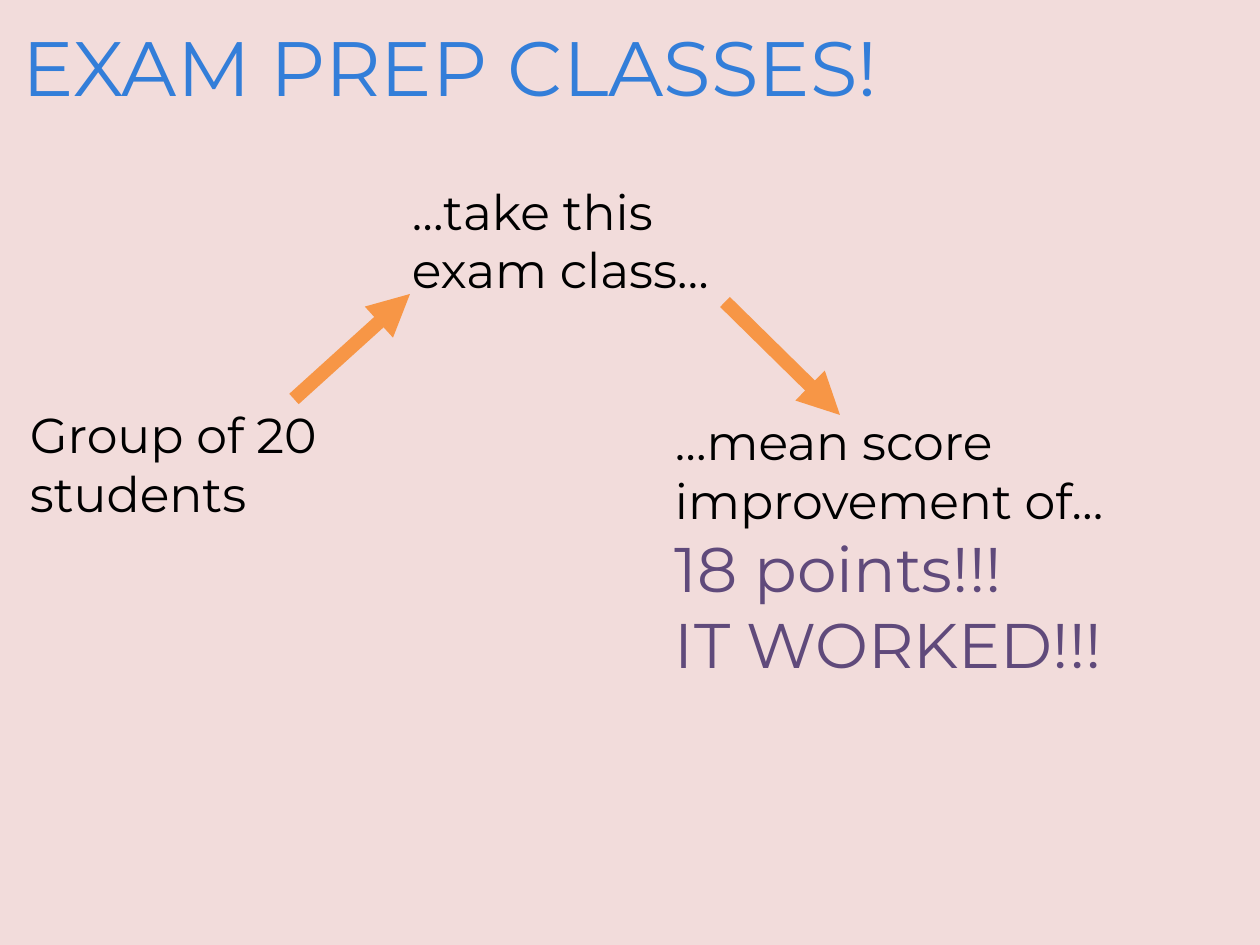
from lxml.etree import SubElement
from pptx import Presentation
from pptx.dml.color import RGBColor
from pptx.enum.shapes import MSO_CONNECTOR
from pptx.enum.text import MSO_ANCHOR
from pptx.oxml.ns import qn
from pptx.util import Inches, Pt

BACKGROUND = RGBColor(0xF2, 0xDC, 0xDB)
BLACK = RGBColor(0x00, 0x00, 0x00)
BLUE = RGBColor(0x33, 0x7E, 0xD9)
PURPLE = RGBColor(0x60, 0x4A, 0x7B)
ORANGE = RGBColor(0xF7, 0x96, 0x46)
FONT = "Montserrat"


def px(length):
    """Turn pixels (126 to the inch) into EMU."""
    return round(length * Inches(1) / 126)


def add_text(slide, box, insets, indent, lines):
    shape = slide.shapes.add_textbox(*map(px, box))
    frame = shape.text_frame
    frame.word_wrap = True
    frame.margin_left, frame.margin_top, frame.margin_right, frame.margin_bottom = map(px, insets)
    for index, (text, size, color) in enumerate(lines):
        paragraph = frame.add_paragraph() if index else frame.paragraphs[0]
        paragraph._p.get_or_add_pPr().set("marL", str(px(indent)))
        run = paragraph.add_run()
        run.text = text
        run.font.name = FONT
        run.font.size = Pt(size)
        run.font.color.rgb = color
    return frame


presentation = Presentation()
presentation.slide_width = px(1260)
presentation.slide_height = px(945)
slide = presentation.slides.add_slide(presentation.slide_layouts[6])
slide.background.fill.solid()
slide.background.fill.fore_color.rgb = BACKGROUND

# The three steps of the story
default_insets = (13, 6, 13, 6)
step_insets = (8, 13, 13, 6)
steps = [
    ((1, 399, 378, 231), default_insets, [("Group of 20 students", 28, BLACK)]),
    ((388, 168, 378, 231), step_insets, [("…take this exam class…", 28, BLACK)]),
    ((651, 399, 536, 301), step_insets, [
        ("…mean score improvement of…", 28, BLACK),
        ("18 points!!!", 36, PURPLE),
        ("IT WORKED!!!", 36, PURPLE),
    ]),
]
for box, insets, lines in steps:
    add_text(slide, box, insets, 16, lines)

# Arrows from step to step
for ends in [(294, 399, 410, 294), (725, 302, 840, 415)]:
    arrow = slide.shapes.add_connector(MSO_CONNECTOR.STRAIGHT, *map(px, ends))
    arrow.line.color.rgb = ORANGE
    arrow.line.width = Pt(8)
    SubElement(arrow.line._get_or_add_ln(), qn("a:tailEnd"), type="triangle")
    SubElement(arrow._element.spPr, qn("a:effectLst"))

title = add_text(slide, (10, 6, 1134, 120), default_insets, 0,
                 [("EXAM PREP CLASSES!", 44, BLUE)])
title.vertical_anchor = MSO_ANCHOR.MIDDLE

presentation.save("out.pptx")
